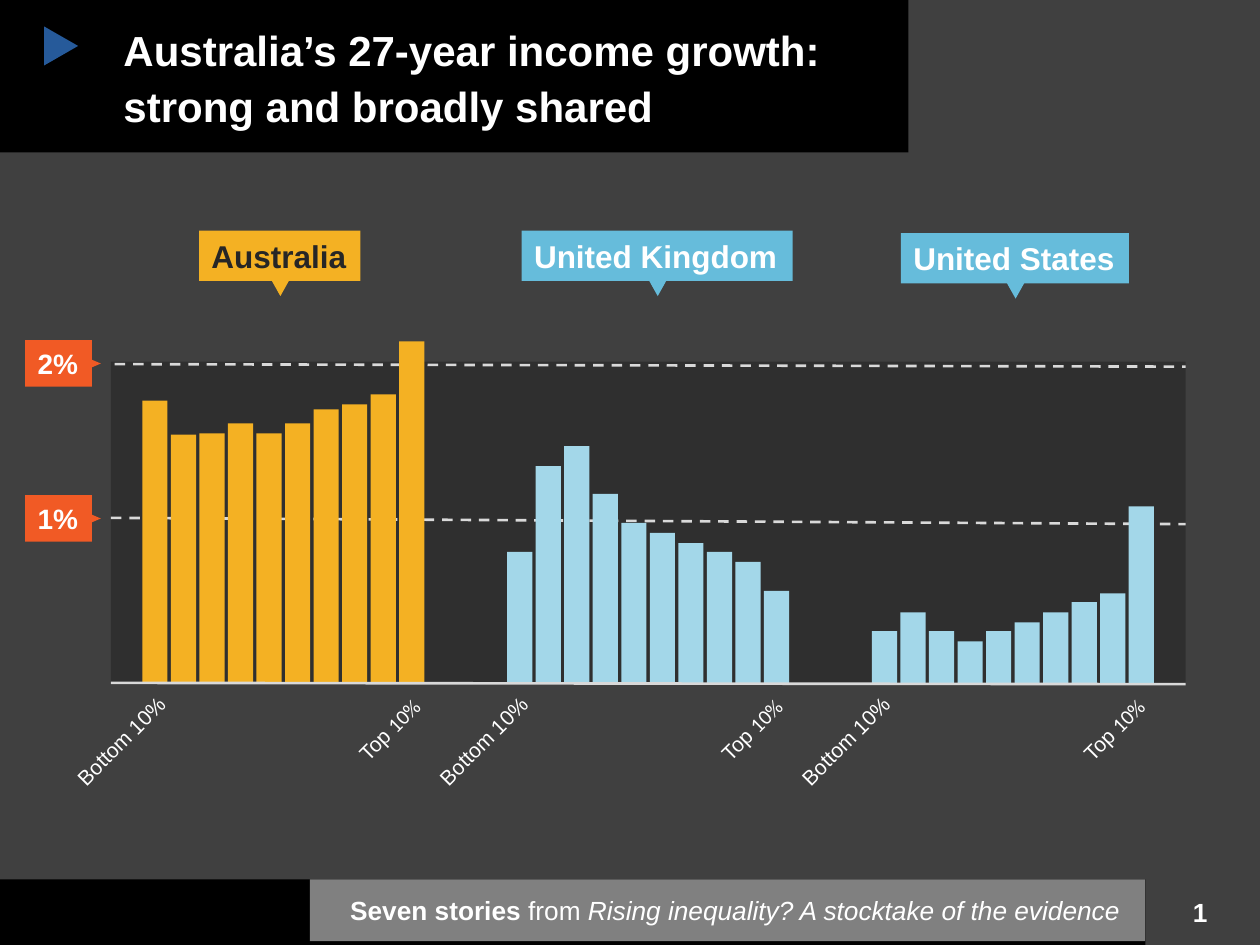
from lxml.etree import SubElement
from pptx import Presentation
from pptx.dml.color import RGBColor
from pptx.enum.dml import MSO_LINE
from pptx.enum.shapes import MSO_CONNECTOR, MSO_SHAPE
from pptx.enum.text import MSO_ANCHOR, PP_ALIGN
from pptx.oxml.ns import qn
from pptx.util import Inches, Pt

BLACK, WHITE, GRID = "000000", "FFFFFF", "D9D9D9"
AMBER, BLUE, PALE_BLUE, ORANGE = "F4B123", "66BCDB", "A3D7E9", "F15A25"

BAR_WIDTH, BAR_STEP = 0.2, 0.2265
COUNTRY_STEP, LABEL_STEP = 2.895, 2.875

# Name, tag box, tag fill, tag text colour, bar colour, bar heights in inches
COUNTRIES = [
    ("Australia", (1.58, 1.83, 1.28, 0.4), AMBER, "262626", AMBER,
     [2.24, 1.97, 1.98, 2.06, 1.98, 2.06, 2.17, 2.21, 2.29, 2.71]),
    ("United Kingdom", (4.14, 1.83, 2.15, 0.4), BLUE, WHITE, PALE_BLUE,
     [1.04, 1.72, 1.88, 1.5, 1.27, 1.19, 1.11, 1.04, 0.96, 0.73]),
    ("United States", (7.15, 1.85, 1.81, 0.4), BLUE, WHITE, PALE_BLUE,
     [0.41, 0.56, 0.41, 0.33, 0.41, 0.48, 0.56, 0.64, 0.71, 1.4]),
]


def rgb(color):
    return RGBColor.from_string(color)


def add_box(s, box, color, kind=MSO_SHAPE.RECTANGLE, rotation=0):
    sp = s.shapes.add_shape(kind, *map(Inches, box))
    sp.shadow.inherit = False
    sp.fill.solid()
    sp.fill.fore_color.rgb = rgb(color)
    sp.line.fill.background()
    sp.rotation = rotation
    return sp


def add_label(s, box, rotation=0):
    sp = s.shapes.add_textbox(*map(Inches, box))
    sp.rotation = rotation
    return sp


def set_text(sp, paragraphs, size, color=WHITE, align=PP_ALIGN.LEFT, wrap=False,
             insets=(0.1, 0.05, 0.1, 0.05), anchor=MSO_ANCHOR.TOP, spacing=None):
    """Fill a shape with paragraphs, each a list of (text, font settings) runs."""
    tf = sp.text_frame
    tf.word_wrap = wrap
    tf.vertical_anchor = anchor
    tf.margin_left, tf.margin_top, tf.margin_right, tf.margin_bottom = map(Inches, insets)
    for i, runs in enumerate(paragraphs):
        p = tf.add_paragraph() if i else tf.paragraphs[0]
        p.alignment = align
        p.line_spacing = spacing
        for text, settings in runs:
            r = p.add_run()
            r.text = text
            r.font.size = Pt(size)
            r.font.color.rgb = rgb(color)
            r.font.name = settings.get("name", "Arial")
            r.font.bold = settings.get("bold", False)
            r.font.italic = settings.get("italic", False)


def add_rule(s, start, end, dashed=False):
    line = s.shapes.add_connector(MSO_CONNECTOR.STRAIGHT, *map(Inches, start + end))
    line.line.color.rgb = rgb(GRID)
    line.line.width = Pt(1.5)
    if dashed:
        line.line.dash_style = MSO_LINE.DASH
    SubElement(line._element.spPr, qn("a:effectLst"))


def add_header(s, box):
    left, top = box[:2]
    bold = {"bold": True}
    title = add_box(s, box, BLACK)
    set_text(title, [[("Australia’s 27-year income growth:", bold)],
                     [("strong and broadly shared", bold)]],
             24, wrap=True, insets=(0.98, 0.16, 0.39, 0.16), spacing=Pt(32))
    add_box(s, (left + 0.33, top + 0.24, 0.31, 0.27), "265A9A",
            MSO_SHAPE.ISOSCELES_TRIANGLE, 90)


def add_footer(s, box):
    left, top, width, height = box
    add_box(s, box, BLACK)
    strip = add_box(s, (left + 2.46, top, width - 2.46, 0.49), "808080")
    set_text(strip, [[("Seven stories ", {"bold": True}), ("from ", {}),
                      ("Rising inequality? A stocktake of the evidence", {"italic": True})]],
             15, align=PP_ALIGN.RIGHT, wrap=True, insets=(0.2, 0.12, 0.2, 0.12))
    number = add_label(s, (left + width, top + 0.06, 0.87, 0.4))
    set_text(number, [[("1", {"bold": True})]], 15, align=PP_ALIGN.CENTER, wrap=True,
             insets=(0.1, 0, 0.1, 0), anchor=MSO_ANCHOR.MIDDLE)


def add_panel(s, box):
    left, top, width, height = box
    panel = add_box(s, box, BLACK)
    color = panel._element.spPr.find(qn("a:solidFill")).find(qn("a:srgbClr"))
    SubElement(color, qn("a:alpha"), val="25000")
    right = left + width
    add_rule(s, (left + 0.03, top + 0.02), (right, top + 0.04), dashed=True)
    add_rule(s, (left, top + 1.24), (right, top + 1.29), dashed=True)


def add_bars(s, left, baseline, heights, color):
    for i, height in enumerate(heights):
        add_box(s, (left + i * BAR_STEP, baseline - height, BAR_WIDTH, height), color)


def add_decile_labels(s, left, top):
    bottom = add_label(s, (left, top + 0.09, 1.12, 0.3), 315)
    set_text(bottom, [[("Bottom 10%", {})]], 12, align=PP_ALIGN.CENTER)
    highest = add_label(s, (left + 2.29, top, 0.8, 0.3), 315)
    set_text(highest, [[("Top ", {}), ("10%", {"name": "Calibri"})]],
             12, align=PP_ALIGN.CENTER)


def add_axis_tag(s, box, text):
    left, top, width, height = box
    set_text(add_box(s, box, ORANGE), [[(text, {"bold": True})]], 16)
    add_box(s, (left + width - 0.06, top + height / 2 - 0.07, 0.12, 0.14), ORANGE,
            MSO_SHAPE.ISOSCELES_TRIANGLE, 90)


def add_country_tag(s, box, text, fill, color):
    left, top, width, height = box
    add_box(s, (left + width / 2 - 0.09, top + height - 0.05, 0.19, 0.17), fill,
            MSO_SHAPE.ISOSCELES_TRIANGLE, 180)
    set_text(add_box(s, box, fill), [[(text, {"bold": True})]], 18, color)


def add_income_chart(s, box):
    left, top, width, height = box
    baseline = top + height - 0.01
    add_panel(s, box)
    for text, tag_top in (("2%", 2.7), ("1%", 3.93)):
        add_axis_tag(s, (0.2, tag_top, 0.53, 0.37), text)
    for i, (name, tag_box, fill, color, bar_color, heights) in enumerate(COUNTRIES):
        add_bars(s, left + 0.25 + i * COUNTRY_STEP, baseline, heights, bar_color)
        add_country_tag(s, tag_box, name, fill, color)
        add_decile_labels(s, left - 0.48 + i * LABEL_STEP, baseline + 0.22)
    add_rule(s, (left, baseline), (left + width, baseline + 0.01))


def main():
    prs = Presentation()
    prs.slide_width, prs.slide_height = Inches(10), Inches(7.5)
    s = prs.slides.add_slide(prs.slide_layouts[6])
    s.background.fill.solid()
    s.background.fill.fore_color.rgb = rgb("404040")
    add_header(s, (0, -0.01, 7.21, 1.22))
    add_income_chart(s, (0.88, 2.87, 8.53, 2.56))
    add_footer(s, (0, 6.98, 9.09, 0.52))
    prs.save("out.pptx")


if __name__ == "__main__":
    main()
